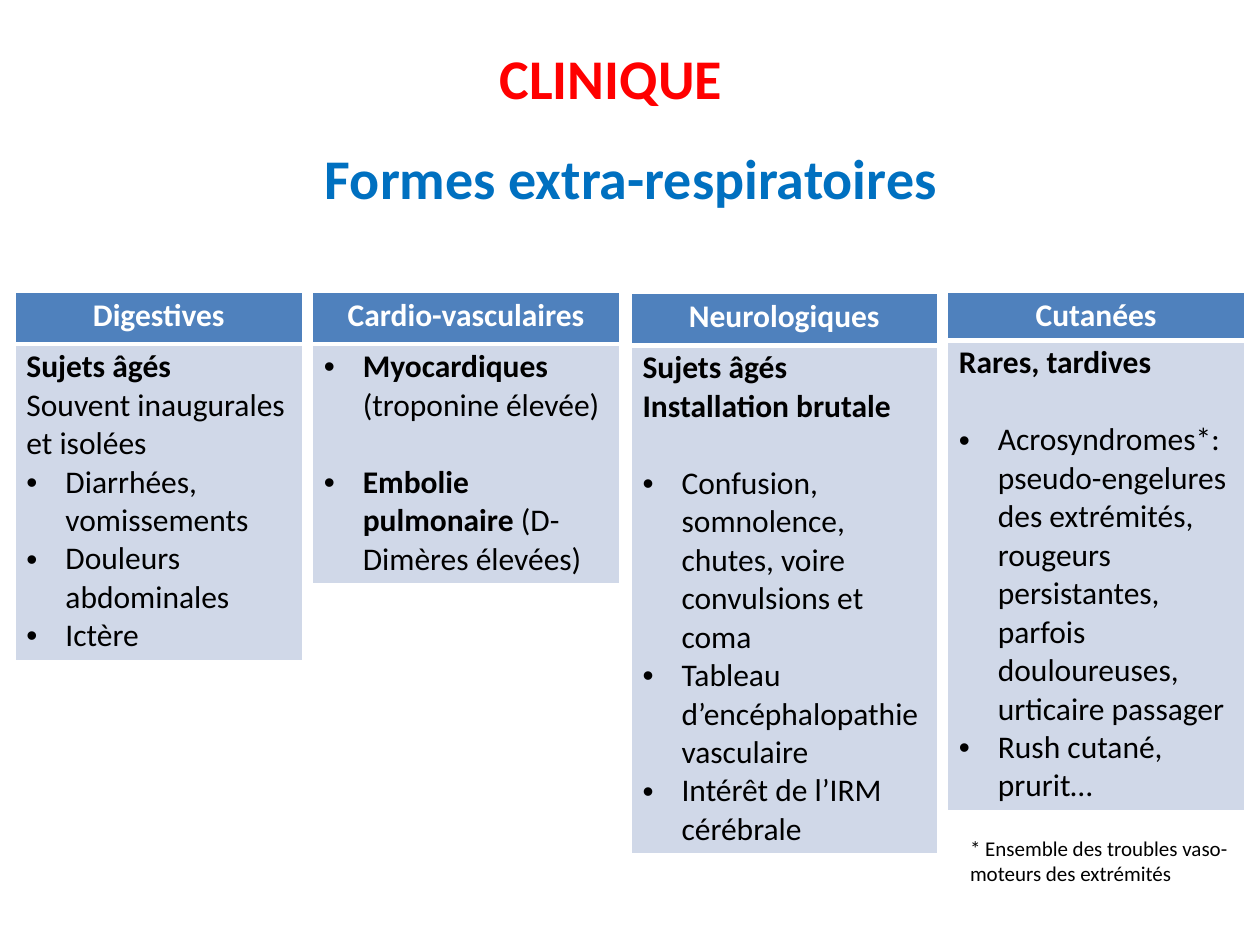
from dataclasses import dataclass

from pptx import Presentation
from pptx.dml.color import RGBColor
from pptx.enum.text import MSO_AUTO_SIZE, PP_ALIGN
from pptx.oxml.ns import qn
from pptx.util import Inches, Pt
from lxml.etree import SubElement

BLACK = RGBColor(0, 0, 0)
WHITE = RGBColor(255, 255, 255)
RED = RGBColor(255, 0, 0)
BLUE = RGBColor(0, 0x70, 0xC0)
HEADER_FILL = RGBColor(0x4F, 0x81, 0xBD)
BODY_FILL = RGBColor(0xD0, 0xD8, 0xE8)


@dataclass
class Item:
    bold: str = ""
    plain: str = ""
    bullet: bool = False
    gap: bool = False


class ClinicalSlide:
    font_name = "Calibri"
    table_size = 18
    line_gap = 22
    indent = Inches(0.31)

    def __init__(self, slide):
        self.slide = slide

    def set_font(self, font, size, color, bold=None):
        font.name = self.font_name
        font.size = Pt(size)
        font.color.rgb = color
        font.bold = bold

    def text(self, left, top, width, height, words, size, color,
             bold=False, align=PP_ALIGN.LEFT, grow=False):
        box = self.slide.shapes.add_textbox(
            Inches(left), Inches(top), Inches(width), Inches(height))
        frame = box.text_frame
        frame.word_wrap = True
        if grow:
            frame.auto_size = MSO_AUTO_SIZE.SHAPE_TO_FIT_TEXT
        paragraph = frame.paragraphs[0]
        paragraph.text = words
        paragraph.alignment = align
        self.set_font(paragraph.font, size, color, bold)

    def bullet(self, paragraph):
        properties = paragraph._p.get_or_add_pPr()
        properties.set("marL", str(self.indent))
        properties.set("indent", str(-self.indent))
        SubElement(properties, qn("a:buFont")).set("typeface", "Arial")
        SubElement(properties, qn("a:buChar")).set("char", "•")

    def style_cell(self, cell, fill, bottom_width):
        cell.margin_left = cell.margin_right = Inches(0.09)
        cell.margin_top = Inches(0.03)
        cell.margin_bottom = Inches(0.04)
        properties = cell._tc.get_or_add_tcPr()
        widths = {"a:lnL": 1, "a:lnR": 1, "a:lnT": 1, "a:lnB": bottom_width}
        for tag, width in widths.items():
            line = SubElement(properties, qn(tag))
            line.set("w", str(Pt(width)))
            solid = SubElement(line, qn("a:solidFill"))
            SubElement(solid, qn("a:srgbClr")).set("val", str(WHITE))
        cell.fill.solid()
        cell.fill.fore_color.rgb = fill

    def table(self, left, top, width, heights, heading, items):
        table = self.slide.shapes.add_table(
            2, 1, Inches(left), Inches(top), Inches(width),
            Inches(sum(heights))).table
        for row, height in zip(table.rows, heights):
            row.height = Inches(height)

        header, body = table.cell(0, 0), table.cell(1, 0)
        self.style_cell(header, HEADER_FILL, 3)
        self.style_cell(body, BODY_FILL, 1)

        paragraph = header.text_frame.paragraphs[0]
        paragraph.text = heading
        paragraph.alignment = PP_ALIGN.CENTER
        self.set_font(paragraph.font, self.table_size, WHITE, True)

        frame = body.text_frame
        for index, item in enumerate(items):
            paragraph = frame.add_paragraph() if index else frame.paragraphs[0]
            if item.bullet:
                self.bullet(paragraph)
            if item.gap:
                paragraph.space_before = Pt(self.line_gap)
            self.set_font(paragraph.font, self.table_size, BLACK)
            for words, bold in ((item.bold, True), (item.plain, False)):
                if words:
                    run = paragraph.add_run()
                    run.text = words
                    run.font.bold = bold


def point(plain, bold="", gap=False):
    return Item(bold, plain, bullet=True, gap=gap)


# left, top, width, row heights, heading, items
FORMS = [
    (0.12, 2.32, 2.28, (0.41, 2.5), "Digestives", [
        Item("Sujets âgés"),
        Item(plain="Souvent inaugurales et isolées"),
        point("Diarrhées, vomissements"),
        point("Douleurs abdominales"),
        point("Ictère"),
    ]),
    (2.48, 2.32, 2.44, (0.41, 1.9), "Cardio-vasculaires", [
        point("(troponine élevée)", "Myocardiques "),
        point("(D-Dimères élevées)", "Embolie pulmonaire ", gap=True),
    ]),
    (5.01, 2.33, 2.43, (0.41, 4), "Neurologiques", [
        Item("Sujets âgés"),
        Item("Installation brutale"),
        point("Confusion, somnolence, chutes, voire convulsions et coma",
              gap=True),
        point("Tableau d’encéphalopathie vasculaire"),
        point("Intérêt de l’IRM cérébrale"),
    ]),
    (7.52, 2.32, 2.36, (0.38, 3.72), "Cutanées", [
        Item("Rares, tardives"),
        point("Acrosyndromes*: pseudo-engelures des extrémités, rougeurs "
              "persistantes, parfois douloureuses, urticaire passager",
              gap=True),
        point("Rush cutané, prurit…"),
    ]),
]


def main():
    presentation = Presentation()
    presentation.slide_width = Inches(10)
    presentation.slide_height = Inches(7.5)
    page = ClinicalSlide(
        presentation.slides.add_slide(presentation.slide_layouts[6]))

    # Clinical forms
    for form in FORMS:
        page.table(*form)

    # Titles
    page.text(0.35, 0.3, 9, 0.77, "CLINIQUE", 32, RED, True, PP_ALIGN.CENTER)
    page.text(0.51, 1.09, 9, 0.77, "Formes extra-respiratoires", 32, BLUE,
              True, PP_ALIGN.CENTER)

    # Footnote
    page.text(7.6, 6.58, 2.28, 0.5,
              "* Ensemble des troubles vaso-moteurs des extrémités",
              12, BLACK, grow=True)

    presentation.save("out.pptx")


if __name__ == "__main__":
    main()
